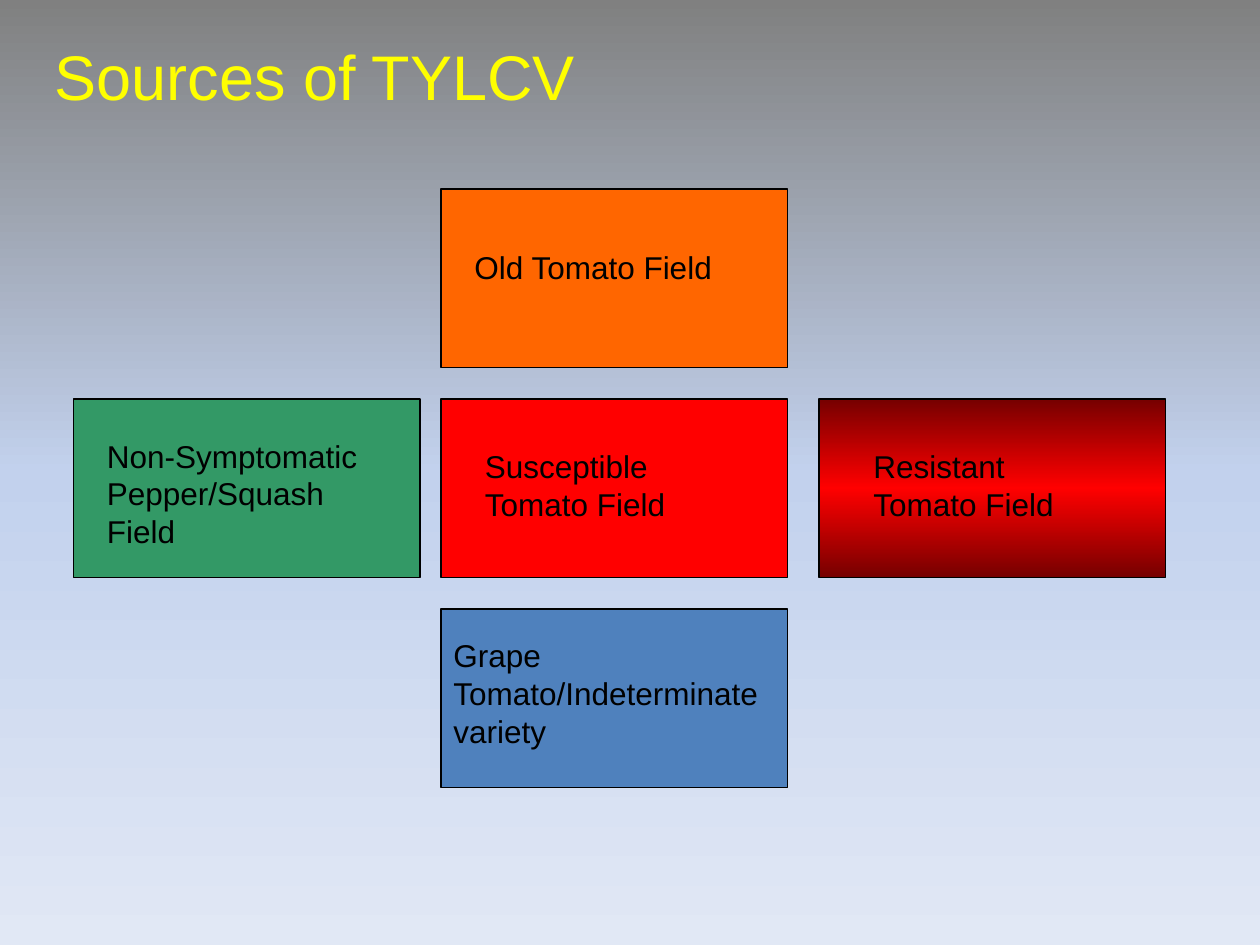
"""Build the slide showing the field sources of TYLCV around a susceptible tomato field."""
from copy import deepcopy

from pptx import Presentation
from pptx.dml.color import RGBColor
from pptx.enum.shapes import MSO_SHAPE
from pptx.enum.text import MSO_ANCHOR, MSO_AUTO_SIZE, PP_ALIGN
from pptx.oxml.ns import qn
from pptx.util import Pt

BLACK = RGBColor(0x00, 0x00, 0x00)
YELLOW = RGBColor(0xFF, 0xFF, 0x00)
RED = RGBColor(0xFF, 0x00, 0x00)
DARK_RED = RGBColor(0x76, 0x00, 0x00)
ORANGE = RGBColor(0xFF, 0x66, 0x00)
GREEN = RGBColor(0x33, 0x99, 0x66)
BLUE = RGBColor(0x4F, 0x81, 0xBD)
GRAY = RGBColor(0x80, 0x80, 0x80)
SKY = RGBColor(0xC2, 0xD1, 0xED)
PALE_SKY = RGBColor(0xE1, 0xE8, 0xF5)

TITLE = "Sources of TYLCV"
FIELD_SIZE = (198, 102)
COLUMNS = (42, 252, 468)
ROWS = (108, 228, 348)
# FIELDS
FIELDS = [
    {"text": "Susceptible Tomato Field", "column": 1, "row": 1, "colors": [RED], "label": (18, 24, 162, 50)},
    {"text": "Old Tomato Field", "column": 1, "row": 0, "colors": [ORANGE], "label": (12, 30, 168, 29)},
    {"text": "Resistant Tomato Field", "column": 2, "row": 1,
     "colors": [DARK_RED, RED, DARK_RED], "label": (24, 24, 144, 50)},
    {"text": "Grape Tomato/Indeterminate variety", "column": 1, "row": 2,
     "colors": [BLUE], "label": (0, 12, 192, 72)},
    {"text": "Non-Symptomatic Pepper/Squash Field", "column": 0, "row": 1,
     "colors": [GREEN], "label": (12, 18, 168, 73)},
]


def paint(fill, element, colors):
    if len(colors) == 1:
        fill.solid()
        fill.fore_color.rgb = colors[0]
        return
    fill.gradient()
    fill.gradient_angle = 270
    stop_list = next(element.iter(qn("a:gsLst")))
    stop_list.insert(1, deepcopy(stop_list[0]))
    for index, (stop, color) in enumerate(zip(fill.gradient_stops, colors)):
        stop.position = index / (len(colors) - 1)
        stop.color.rgb = color


def write(shape, text, size, color):
    frame = shape.text_frame
    frame.text = text
    frame.word_wrap = True
    frame.vertical_anchor = MSO_ANCHOR.TOP
    frame.auto_size = MSO_AUTO_SIZE.SHAPE_TO_FIT_TEXT
    paragraph = frame.paragraphs[0]
    paragraph.alignment = PP_ALIGN.LEFT
    paragraph.font.name = "Arial"
    paragraph.font.size = Pt(size)
    paragraph.font.color.rgb = color


def add_field(slide, field):
    left, top = COLUMNS[field["column"]], ROWS[field["row"]]
    box = slide.shapes.add_shape(MSO_SHAPE.RECTANGLE, *map(Pt, (left, top, *FIELD_SIZE)))
    box.shadow.inherit = False
    paint(box.fill, box.element, field["colors"])
    box.line.color.rgb = BLACK
    box.line.width = Pt(0.75)


def add_label(slide, field):
    across, down, width, height = field["label"]
    left, top = COLUMNS[field["column"]] + across, ROWS[field["row"]] + down
    label = slide.shapes.add_textbox(*map(Pt, (left, top, width, height)))
    write(label, field["text"], 18, BLACK)


def main():
    presentation = Presentation()
    presentation.slide_width, presentation.slide_height = Pt(720), Pt(540)
    slide = presentation.slides.add_slide(presentation.slide_layouts[5])
    paint(slide.background.fill, slide.element, [GRAY, SKY, PALE_SKY])

    title = slide.shapes.title
    title.left, title.top, title.width, title.height = map(Pt, (24, 18, 660, 51))
    write(title, TITLE, 36, YELLOW)

    for field in FIELDS:
        add_field(slide, field)
    for field in FIELDS:
        add_label(slide, field)
    presentation.save("out.pptx")


if __name__ == "__main__":
    main()
